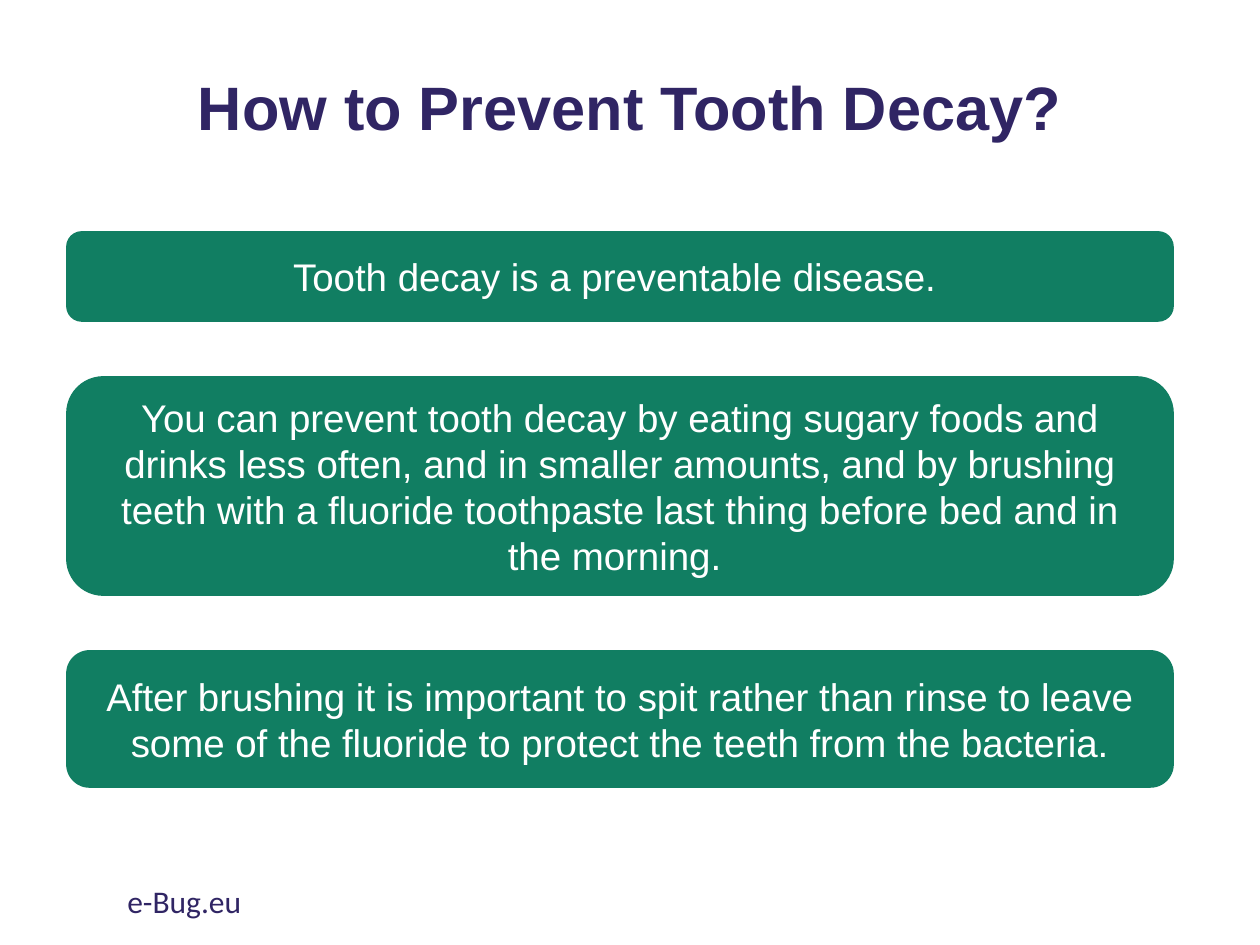
import pptx
import pptx.util
import pptx.dml.color
import pptx.enum.shapes
import pptx.enum.text

PX = 914400 / 126
COLORS = {"navy": "302564", "green": "117E62", "white": "FFFFFF"}
ALIGN = pptx.enum.text.PP_ALIGN
ANCHOR = pptx.enum.text.MSO_ANCHOR


class SlideBuilder:
    def __init__(self, slide):
        self.s = slide

    def emu(self, *lengths):
        return [pptx.util.Emu(round(n * PX)) for n in lengths]

    def color(self, name):
        return pptx.dml.color.RGBColor.from_string(COLORS[name])

    def add_text(self, sp, text, size, color, font, bold, align, anchor, spacing=None):
        tf = sp.text_frame
        tf.word_wrap = True
        tf.vertical_anchor = anchor
        p = tf.paragraphs[0]
        p.alignment = align
        p.line_spacing = spacing
        r = p.add_run()
        r.text = text
        r.font.size = pptx.util.Pt(size)
        r.font.name = font
        r.font.bold = bold
        r.font.color.rgb = self.color(color)

    def label(self, box, text, size, font="Arial", bold=False,
              align=ALIGN.LEFT, anchor=ANCHOR.TOP, spacing=None):
        sp = self.s.shapes.add_textbox(*self.emu(*box))
        self.add_text(sp, text, size, "navy", font, bold, align, anchor, spacing)

    def card(self, box, text):
        kind = pptx.enum.shapes.MSO_SHAPE.ROUNDED_RECTANGLE
        sp = self.s.shapes.add_shape(kind, *self.emu(*box))
        sp.shadow.inherit = False
        sp.fill.solid()
        sp.fill.fore_color.rgb = self.color("green")
        sp.line.color.rgb = self.color("green")
        sp.line.width = pptx.util.Pt(1)
        self.add_text(sp, text, 22, "white", "Arial", False, ALIGN.CENTER, ANCHOR.MIDDLE)


def main():
    prs = pptx.Presentation()
    prs.slide_width = pptx.util.Inches(10)
    prs.slide_height = pptx.util.Inches(7.5)
    b = SlideBuilder(prs.slides.add_slide(prs.slide_layouts[6]))

    b.label((87, 53, 1086, 115), "How to Prevent Tooth Decay?", 35, bold=True,
            align=ALIGN.CENTER, anchor=ANCHOR.MIDDLE, spacing=0.9)
    b.label((115, 876, 426, 50), "e-Bug.eu", 18, font="Calibri")

    cards = [
        (89, "Tooth decay is a preventable disease. "),
        (218, "You can prevent tooth decay by eating sugary foods and drinks "
              "less often, and in smaller amounts, and by brushing teeth with a "
              "fluoride toothpaste last thing before bed and in the morning. "),
        (136, "After brushing it is important to spit rather than rinse to leave "
              "some of the fluoride to protect the teeth from the bacteria."),
    ]
    top, gap = 232, 56
    for height, text in cards:
        b.card((67, top, 1106, height), text)
        top += height + gap

    prs.save("out.pptx")


if __name__ == "__main__":
    main()
